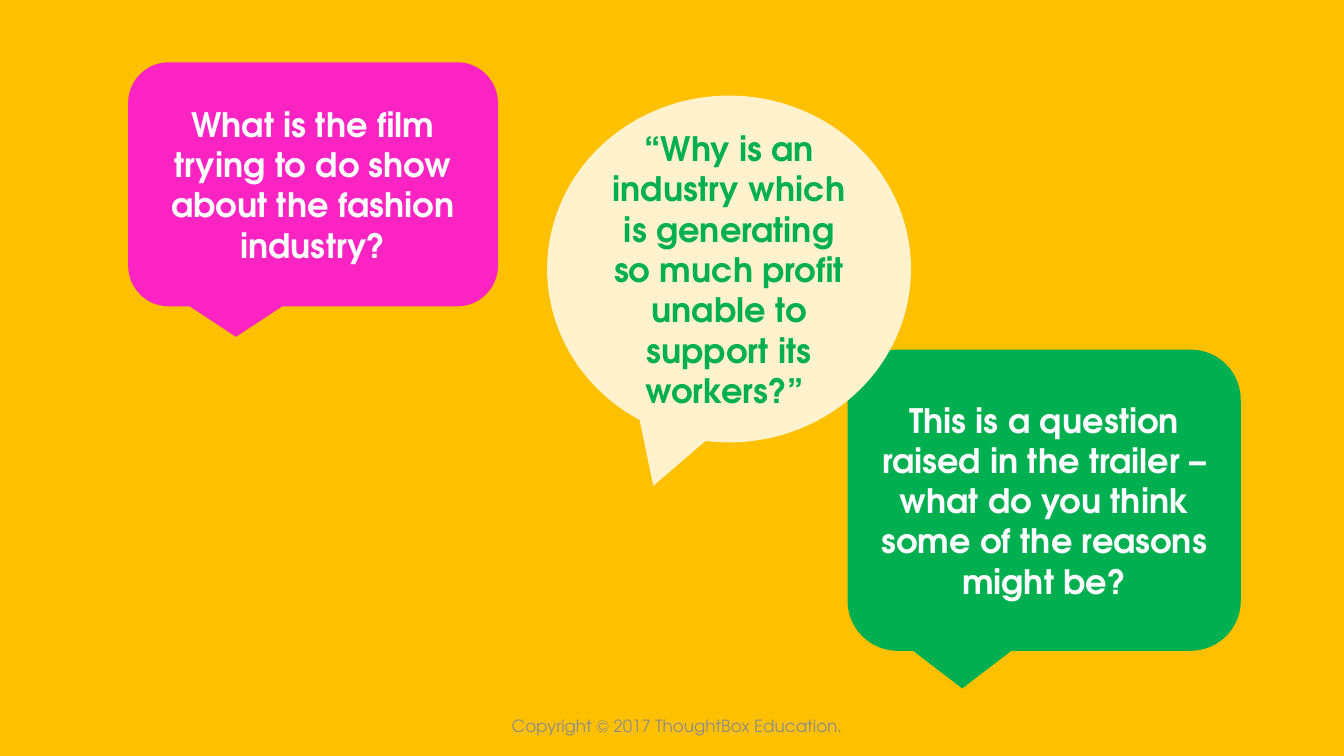
from pptx import Presentation
from pptx.dml.color import RGBColor
from pptx.enum.shapes import MSO_SHAPE
from pptx.enum.text import MSO_ANCHOR, PP_ALIGN
from pptx.util import Cm, Pt

FONT = "TeX Gyre Adventor"
AMBER, PINK, GREEN, CREAM = "FFC000", "FB23C2", "00B050", "FFF2CC"
WHITE, GREY = "FFFFFF", "8C8C8C"

# shape, box in cm (left, top, width, height), fill, text colour, text
BUBBLES = [
    (MSO_SHAPE.ROUNDED_RECTANGULAR_CALLOUT, (3.23, 1.57, 9.32, 6.15), PINK, WHITE,
     "What is the film trying to do show about the fashion industry?"),
    (MSO_SHAPE.ROUNDED_RECTANGULAR_CALLOUT, (21.36, 8.81, 9.91, 7.59), GREEN, WHITE,
     "This is a question raised in the trailer – what do you think "
     "some of the reasons might be?"),
    (MSO_SHAPE.OVAL_CALLOUT, (13.79, 2.41, 9.17, 8.74), CREAM, GREEN,
     "“Why is an industry which is generating so much profit unable "
     "to support its workers?” "),
]


def paint(fill, color):
    fill.solid()
    fill.fore_color.rgb = RGBColor.from_string(color)


def write(sp, text, size, color, bold=False):
    """Put one centred paragraph in the middle of a shape."""
    tf = sp.text_frame
    tf.word_wrap = True
    tf.vertical_anchor = MSO_ANCHOR.MIDDLE
    p = tf.paragraphs[0]
    p.text = text
    p.alignment = PP_ALIGN.CENTER
    font = p.runs[0].font
    font.name, font.size, font.bold = FONT, Pt(size), bold
    font.color.rgb = RGBColor.from_string(color)


def add_footer(s, box, text):
    sp = s.shapes.add_textbox(*map(Cm, box))
    write(sp, text, 12, GREY)


def add_bubble(s, shape, box, fill, color, text):
    sp = s.shapes.add_shape(shape, *map(Cm, box))
    sp.shadow.inherit = False
    paint(sp.fill, fill)
    sp.line.fill.background()
    write(sp, text, 24, color, bold=True)


def main():
    prs = Presentation()
    prs.slide_width, prs.slide_height = Cm(33.87), Cm(19.05)
    s = prs.slides.add_slide(prs.slide_layouts[6])
    paint(s.background.fill, AMBER)
    add_footer(s, (11.35, 17.78, 11.43, 1.02), "Copyright © 2017 ThoughtBox Education.")
    for bubble in BUBBLES:
        add_bubble(s, *bubble)
    prs.save("out.pptx")


if __name__ == "__main__":
    main()
